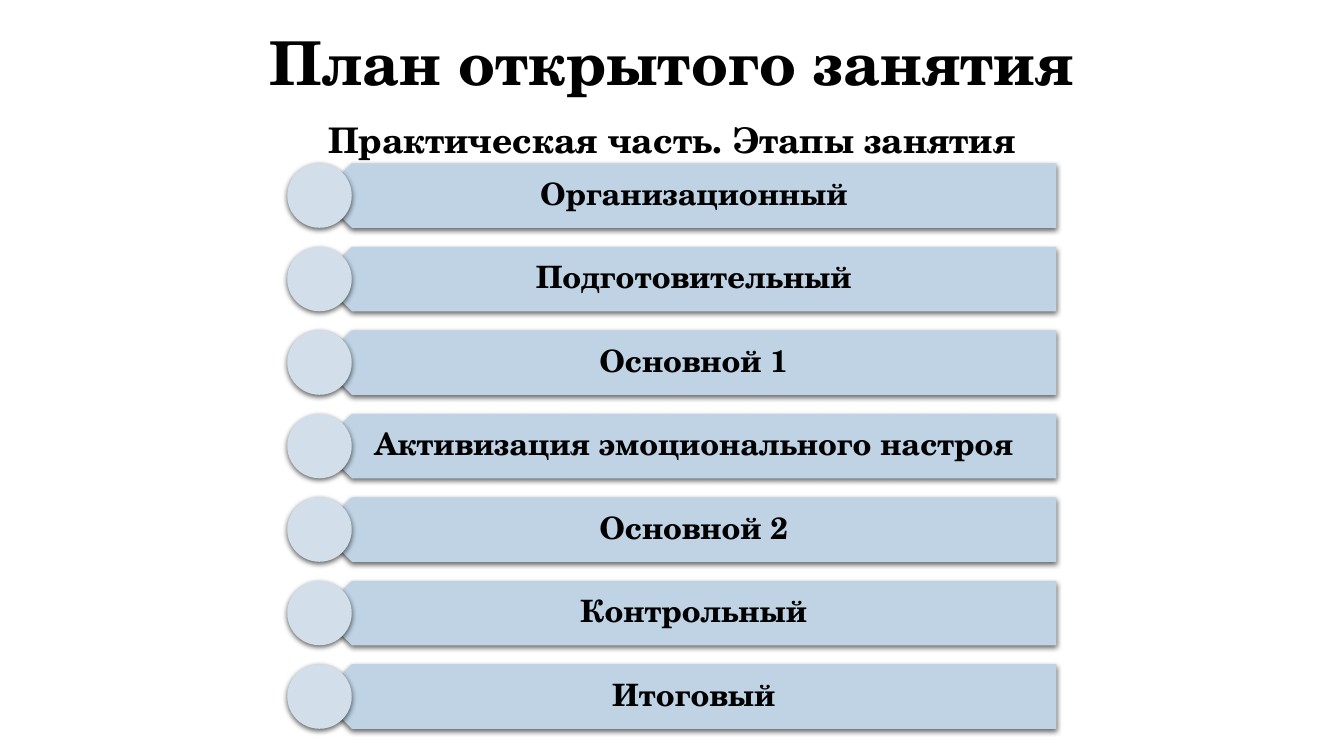
from lxml import etree
from pptx import Presentation
from pptx.dml.color import RGBColor
from pptx.enum.shapes import MSO_SHAPE as Preset
from pptx.enum.text import MSO_ANCHOR as Anchor, MSO_AUTO_SIZE as AutoSize, PP_ALIGN as Align
from pptx.oxml import parse_xml
from pptx.oxml.ns import nsdecls
from pptx.util import Pt

COLORS = {"text": "000000", "bar": "BFD3E4", "marker": "D2DEEA", "shadow": "000000"}
FONT = "TeX Gyre Schola"
STAGES = [
    "Организационный",
    "Подготовительный",
    "Основной 1",
    "Активизация эмоционального настроя",
    "Основной 2",
    "Контрольный",
    "Итоговый",
]

# Stage list geometry, in points
FIRST_TOP, STEP = 116.64, 59.64
BAR_LEFT, BAR_WIDTH, BAR_HEIGHT = 228.24, 526.32, 46.08


def add_run(paragraph, text, size):
    run = paragraph.add_run()
    run.text = text
    run.font.name = FONT
    run.font.size = Pt(size)
    run.font.bold = True
    run.font.color.rgb = RGBColor.from_string(COLORS["text"])


def add_shadow(shape):
    shape.shadow.inherit = False
    effects = shape._element.spPr.find("{*}effectLst")
    effects.append(parse_xml(
        f'<a:outerShdw {nsdecls("a")} blurRad="{Pt(4)}" dist="{Pt(1.5)}" '
        f'dir="5400000" algn="ctr" rotWithShape="0">'
        f'<a:srgbClr val="{COLORS["shadow"]}"><a:alpha val="60000"/></a:srgbClr>'
        f'</a:outerShdw>'))


def add_shaded_shape(slide, preset, left, top, width, color):
    shape = slide.shapes.add_shape(preset, Pt(left), Pt(top), Pt(width), Pt(BAR_HEIGHT))
    shape.fill.solid()
    shape.fill.fore_color.rgb = RGBColor.from_string(COLORS[color])
    shape.line.fill.background()
    add_shadow(shape)
    return shape


def add_label(slide, text, top):
    label = slide.shapes.add_textbox(Pt(BAR_LEFT), Pt(top), Pt(BAR_WIDTH), Pt(BAR_HEIGHT))
    frame = label.text_frame
    frame.word_wrap = True
    frame.vertical_anchor = Anchor.MIDDLE
    frame.margin_left, frame.margin_right = Pt(20.3), Pt(12)
    frame.margin_top = frame.margin_bottom = Pt(6.6)
    paragraph = frame.paragraphs[0]
    paragraph.alignment = Align.CENTER
    paragraph.line_spacing = 0.9
    add_run(paragraph, text, 22)


def add_stage(slide, text, top):
    bar = add_shaded_shape(slide, Preset.PENTAGON, BAR_LEFT, top, BAR_WIDTH, "bar")
    bar.rotation = 180
    add_label(slide, text, top)
    # Round marker centred on the tip of the bar
    add_shaded_shape(slide, Preset.OVAL, BAR_LEFT - BAR_HEIGHT / 2, top, BAR_HEIGHT, "marker")


def fill_title(slide):
    title = slide.shapes.title
    title.left, title.top, title.width, title.height = Pt(84), Pt(0), Pt(792), Pt(106.56)
    frame = title.text_frame
    frame.word_wrap = True
    frame.auto_size = AutoSize.NONE
    frame.vertical_anchor = Anchor.MIDDLE
    paragraph = frame.paragraphs[0]
    paragraph.alignment = Align.CENTER
    paragraph.line_spacing = 1.5
    add_run(paragraph, "План открытого занятия", 43.2)
    paragraph.add_line_break()
    add_run(paragraph, "Практическая часть. Этапы занятия", 25.2)


def main():
    presentation = Presentation()
    presentation.slide_width, presentation.slide_height = Pt(960), Pt(540)
    slide = presentation.slides.add_slide(presentation.slide_layouts[5])

    # Heading
    fill_title(slide)

    # Stages of the lesson
    for index, stage in enumerate(STAGES):
        add_stage(slide, stage, FIRST_TOP + index * STEP)

    presentation.save("out.pptx")


if __name__ == "__main__":
    main()
